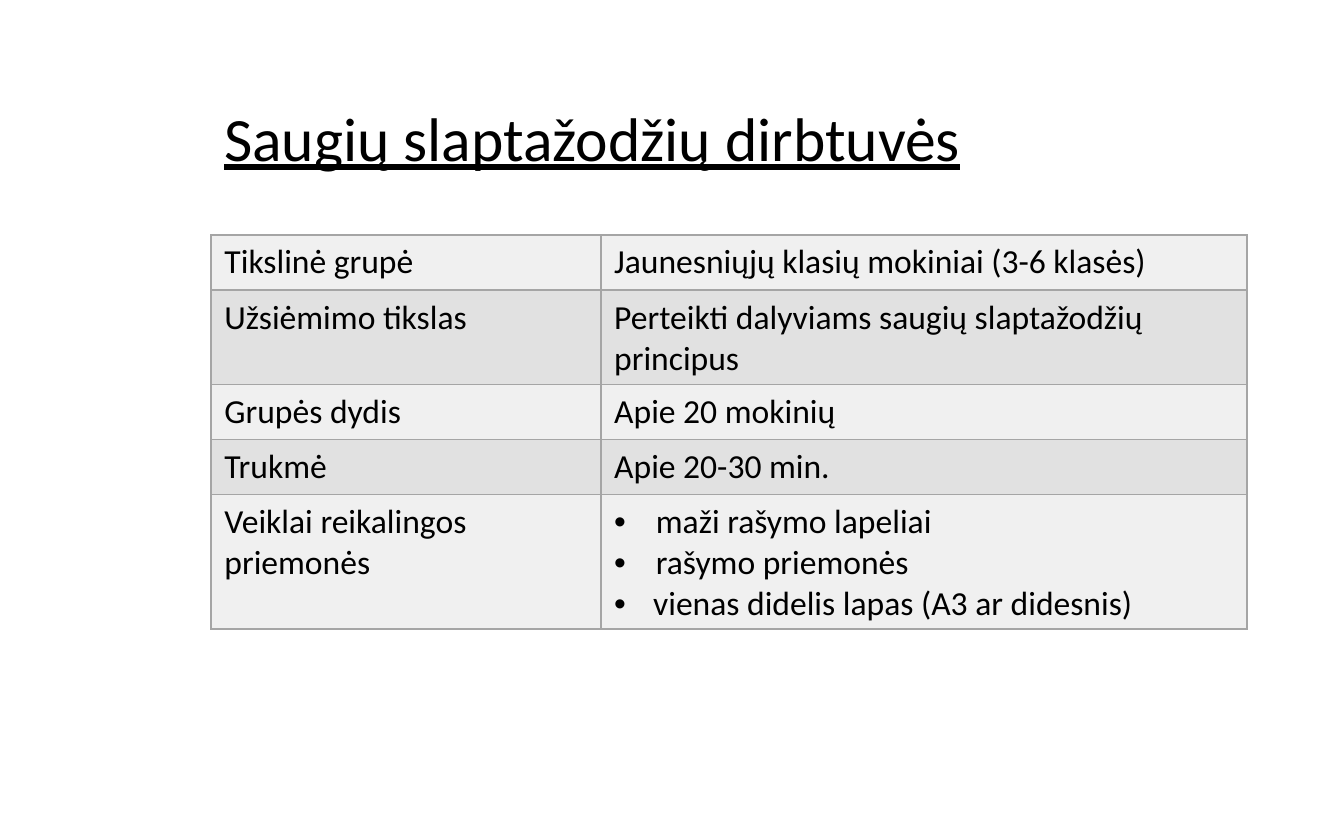
from pptx import Presentation
from pptx.dml.color import RGBColor
from pptx.enum.text import MSO_ANCHOR
from pptx.oxml import parse_xml
from pptx.oxml.ns import nsdecls
from pptx.util import Pt

PX = 9144
FONT = "Calibri"
COLORS = {"text": "000000", "border": "A5A5A5", "light": "F0F0F0", "dark": "E1E1E1"}
ROW_HEIGHT = 41
COLUMN_WIDTHS = (290, 481)
DETAILS = [
    ("Tikslinė grupė", "Jaunesniųjų klasių mokiniai (3-6 klasės)"),
    ("Užsiėmimo tikslas", "Perteikti dalyviams saugių slaptažodžių principus"),
    ("Grupės dydis", "Apie 20 mokinių"),
    ("Trukmė", "Apie 20-30 min."),
    ("Veiklai reikalingos priemonės", [
        ("maži rašymo lapeliai", 31),
        ("rašymo priemonės", 31),
        ("vienas didelis lapas (A3 ar didesnis)", 29),
    ]),
]


def scale(*lengths):
    return [length * PX for length in lengths]


def add_run(paragraph, text, size, underline=None):
    run = paragraph.add_run()
    run.text = text
    run.font.name = FONT
    run.font.size = Pt(size)
    run.font.underline = underline
    run.font.color.rgb = RGBColor.from_string(COLORS["text"])


def add_bullet(paragraph, indent):
    properties = paragraph._p.get_or_add_pPr()
    properties.set("marL", str(indent * PX))
    properties.set("indent", str(-indent * PX))
    properties.append(parse_xml(f'<a:buFont {nsdecls("a")} typeface="Arial"/>'))
    properties.append(parse_xml(f'<a:buChar {nsdecls("a")} char="•"/>'))


def style_cell(cell, color):
    cell.fill.solid()
    cell.fill.fore_color.rgb = RGBColor.from_string(COLORS[color])
    properties = cell._tc.get_or_add_tcPr()
    for position, side in enumerate("LRTB"):
        properties.insert(position, parse_xml(
            f'<a:ln{side} {nsdecls("a")} w="{Pt(1)}"><a:solidFill>'
            f'<a:srgbClr val="{COLORS["border"]}"/></a:solidFill></a:ln{side}>'))


def fill_cell(cell, content):
    lines = [(content, 0)] if isinstance(content, str) else content
    for index, (text, indent) in enumerate(lines):
        frame = cell.text_frame
        paragraph = frame.add_paragraph() if index else frame.paragraphs[0]
        if indent:
            add_bullet(paragraph, indent)
        add_run(paragraph, text, 18)


def add_title(slide, left, top, width, height):
    frame = slide.shapes.add_textbox(*scale(left, top, width, height)).text_frame
    frame.word_wrap = True
    frame.vertical_anchor = MSO_ANCHOR.MIDDLE
    paragraph = frame.paragraphs[0]
    paragraph.line_spacing = 0.9
    add_run(paragraph, "Saugių slaptažodžių dirbtuvės", 33, True)


def add_details(slide, left, top, width, height):
    shape = slide.shapes.add_table(
        len(DETAILS), len(COLUMN_WIDTHS), *scale(left, top, width, height))
    table = shape.table
    for column, column_width in zip(table.columns, COLUMN_WIDTHS):
        column.width = column_width * PX
    for row_index, (row, contents) in enumerate(zip(table.rows, DETAILS)):
        row.height = ROW_HEIGHT * PX
        for cell, content in zip(row.cells, contents):
            style_cell(cell, "dark" if row_index % 2 else "light")
            fill_cell(cell, content)
    shape.height = height * PX


def main():
    presentation = Presentation()
    presentation.slide_width, presentation.slide_height = scale(1000, 625)
    slide = presentation.slides.add_slide(presentation.slide_layouts[6])
    add_title(slide, 157, 53, 786, 104)
    add_details(slide, 157, 175, 771, 292)
    presentation.save("out.pptx")


if __name__ == "__main__":
    main()
